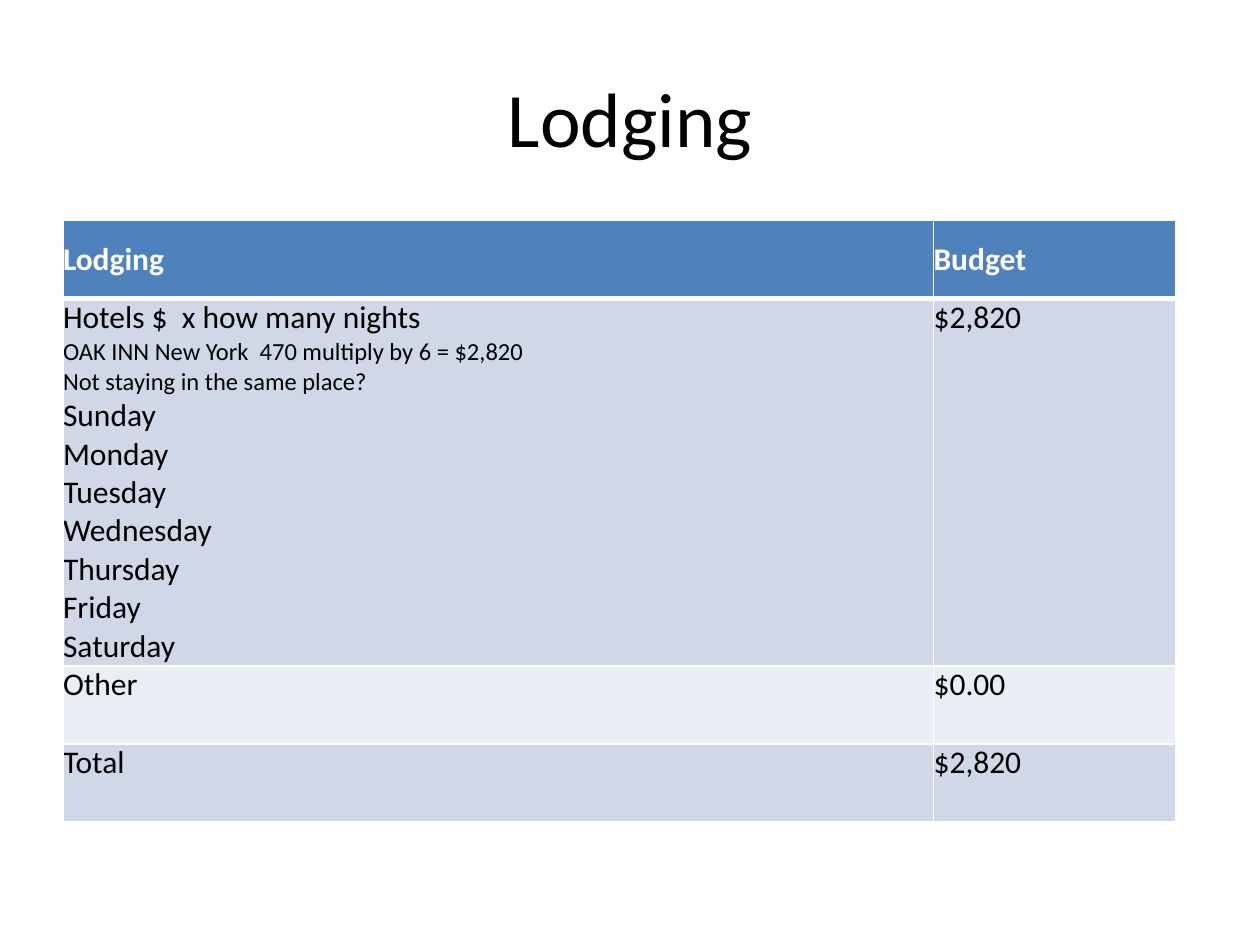
from pptx import Presentation
from pptx.dml.color import RGBColor
from pptx.enum.text import MSO_ANCHOR, PP_ALIGN
from pptx.oxml import parse_xml
from pptx.oxml.ns import nsdecls
from pptx.util import Inches, Pt

MIDDLE, TOP = MSO_ANCHOR.MIDDLE, MSO_ANCHOR.TOP
LEFT, CENTER = PP_ALIGN.LEFT, PP_ALIGN.CENTER

BLACK = RGBColor(0, 0, 0)
WHITE = RGBColor(0xFF, 0xFF, 0xFF)
BLUE = RGBColor(0x4F, 0x81, 0xBD)
BANDS = RGBColor(0xD0, 0xD8, 0xE8), RGBColor(0xE9, 0xED, 0xF4)

COLS = 6.91, 1.92
ROWS = 0.62, 2.88, 0.62, 0.62
DAYS = ["Sunday", "Monday", "Tuesday", "Wednesday", "Thursday", "Friday",
        "Saturday"]
NOTES = ["OAK INN New York  470 multiply by 6 = $2,820",
         "Not staying in the same place?"]
# Each cell is a list of lines
BUDGET = [
    (["Lodging"], ["Budget"]),
    (["Hotels $  x how many nights", *NOTES, *DAYS], ["$2,820"]),
    (["Other"], ["$0.00"]),
    (["Total"], ["$2,820"]),
]


def write(frame, lines, size=18, color=BLACK, bold=False, align=LEFT):
    """Write one paragraph per line; the notes are set smaller."""
    for i, line in enumerate(lines):
        para = frame.add_paragraph() if i else frame.paragraphs[0]
        para.alignment = align
        run = para.add_run()
        run.text = line
        font = run.font
        font.name, font.bold = "Calibri", bold
        font.size = Pt(14 if line in NOTES else size)
        font.color.rgb = color


def edge(cell, side, width):
    """Draw one white border of a cell."""
    cell._tc.get_or_add_tcPr().append(parse_xml(
        f'<a:{side} {nsdecls("a")} w="{Pt(width)}"><a:solidFill>'
        f'<a:srgbClr val="{WHITE}"/></a:solidFill></a:{side}>'))


def add_title(slide, text):
    title = slide.shapes.title
    title.left, title.top = Inches(0.5), Inches(0.3)
    title.width, title.height = Inches(9), Inches(1.25)
    title.text_frame.vertical_anchor = MIDDLE
    write(title.text_frame, [text], size=44, align=CENTER)


def fill_cell(cell, lines, row):
    head = row == 0
    cell.margin_left = cell.margin_right = 0
    cell.margin_top = cell.margin_bottom = 0
    cell.vertical_anchor = MIDDLE if head else TOP
    # Borders, with a thick line under the header
    edge(cell, "lnL", 1)
    edge(cell, "lnR", 1)
    edge(cell, "lnT", 3 if row == 1 else 1)
    edge(cell, "lnB", 3 if head else 1)
    cell.fill.solid()
    cell.fill.fore_color.rgb = BLUE if head else BANDS[(row - 1) % 2]
    write(cell.text_frame, lines, color=WHITE if head else BLACK, bold=head)


def add_budget(slide):
    table = slide.shapes.add_table(
        len(ROWS), len(COLS), Inches(0.5), Inches(1.75),
        Inches(sum(COLS)), Inches(sum(ROWS))).table
    for col, width in zip(table.columns, COLS):
        col.width = Inches(width)
    for r, (high, cells) in enumerate(zip(ROWS, BUDGET)):
        table.rows[r].height = Inches(high)
        for c, lines in enumerate(cells):
            fill_cell(table.cell(r, c), lines, r)


def main():
    deck = Presentation()
    deck.slide_width, deck.slide_height = Inches(10), Inches(7.5)
    slide = deck.slides.add_slide(deck.slide_layouts[5])
    add_title(slide, "Lodging")
    add_budget(slide)
    deck.save("out.pptx")


if __name__ == "__main__":
    main()
